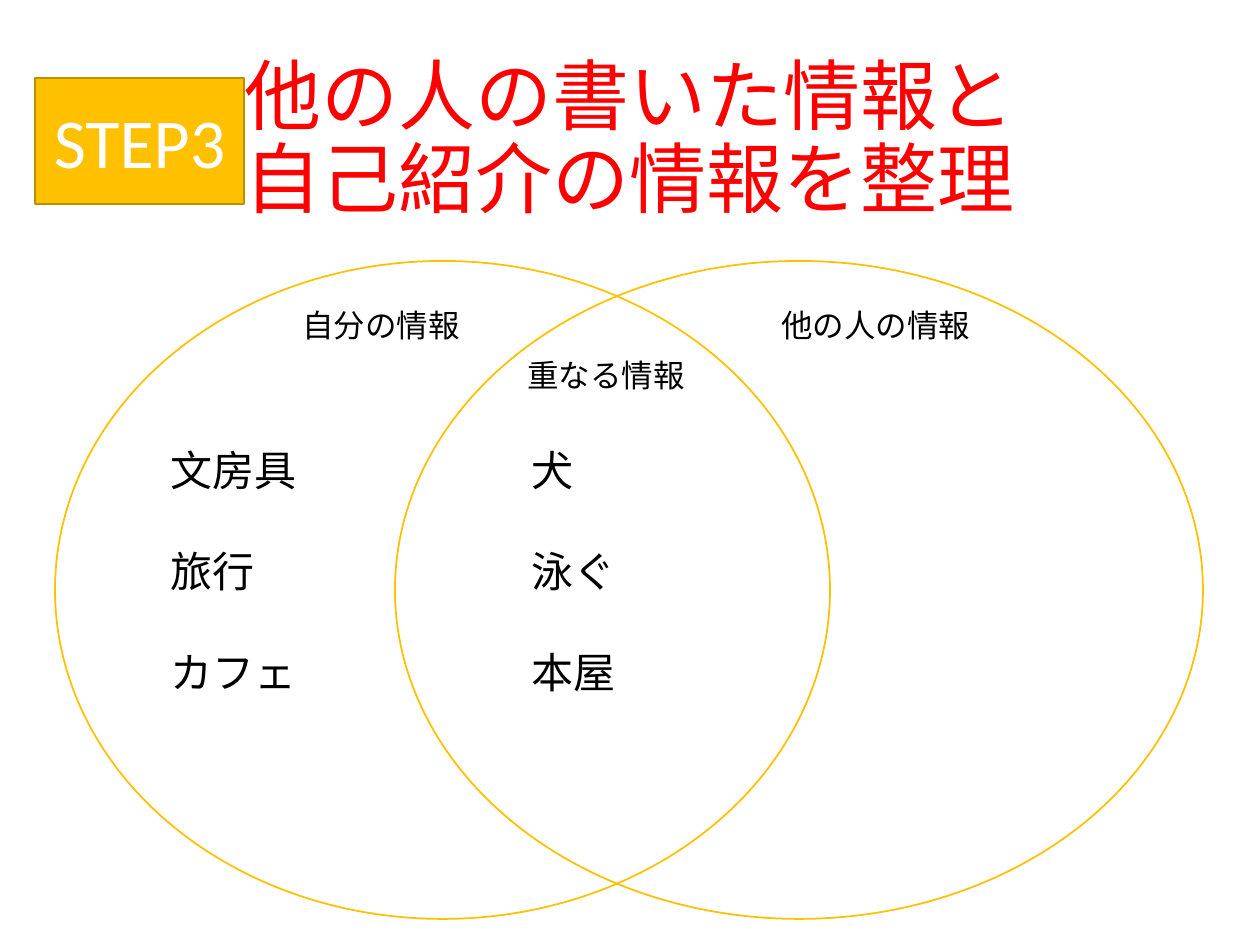
"""Build the STEP3 slide: a Venn diagram sorting shared and separate information."""
from dataclasses import dataclass

from pptx import Presentation
from pptx.dml.color import RGBColor as Color
from pptx.enum.shapes import MSO_SHAPE as Shape
from pptx.enum.text import MSO_ANCHOR as Anchor, MSO_AUTO_SIZE as AutoSize, PP_ALIGN as Align
from pptx.util import Pt

PX = 914400 / 126


@dataclass(frozen=True)
class Theme:
    font: str = "Calibri"
    red: Color = Color(0xFF, 0x00, 0x00)
    gold: Color = Color(0xFF, 0xC0, 0x00)
    dark_gold: Color = Color(0xBD, 0x8E, 0x00)
    white: Color = Color(0xFF, 0xFF, 0xFF)
    black: Color = Color(0x00, 0x00, 0x00)
    title_size: int = 44
    step_size: int = 40
    item_size: int = 24
    label_size: int = 18
    item_gap: int = 29


theme = Theme()


def box(*lengths):
    return [round(length * PX) for length in lengths]


def write(paragraph, text, size, color, align=Align.LEFT):
    paragraph.text = text
    paragraph.alignment = align
    paragraph.font.name = theme.font
    paragraph.font.size = Pt(size)
    paragraph.font.color.rgb = color


presentation = Presentation()
presentation.slide_width, presentation.slide_height = box(1260, 945)
slide = presentation.slides.add_slide(presentation.slide_layouts[5])

title = slide.shapes.title
title.left, title.top, title.width, title.height = box(87, 50, 1086, 183)
title.text_frame.vertical_anchor = Anchor.MIDDLE
heading = title.text_frame.paragraphs[0]
write(heading, "他の人の書いた情報と\n自己紹介の情報を整理", theme.title_size, theme.red, Align.CENTER)
heading.line_spacing = 0.9

step = slide.shapes.add_shape(Shape.RECTANGLE, *box(35, 78, 209, 126))
step.shadow.inherit = False
step.fill.solid()
step.fill.fore_color.rgb = theme.gold
step.line.color.rgb = theme.dark_gold
step.line.width = Pt(1)
step.text_frame.vertical_anchor = Anchor.MIDDLE
write(step.text_frame.paragraphs[0], "STEP3", theme.step_size, theme.white, Align.CENTER)

for left, width in [(55, 775), (395, 808)]:
    circle = slide.shapes.add_shape(Shape.OVAL, *box(left, 261, width, 658))
    circle.shadow.inherit = False
    circle.fill.background()
    circle.line.color.rgb = theme.gold
    circle.line.width = Pt(1)

texts = [
    (290, 300, 200, 50, theme.label_size, ["自分の情報"]),
    (769, 300, 237, 50, theme.label_size, ["他の人の情報"]),
    (515, 350, 200, 50, theme.label_size, ["重なる情報"]),
    (158, 438, 220, 267, theme.item_size, ["文房具", "旅行", "カフェ"]),
    (519, 438, 220, 369, theme.item_size, ["犬", "泳ぐ", "本屋"]),
]
for left, top, width, height, size, lines in texts:
    frame = slide.shapes.add_textbox(*box(left, top, width, height)).text_frame
    frame.word_wrap = True
    frame.auto_size = AutoSize.SHAPE_TO_FIT_TEXT
    for index, line in enumerate(lines):
        paragraph = frame.add_paragraph() if index else frame.paragraphs[0]
        write(paragraph, line, size, theme.black)
        if index:
            paragraph.space_before = Pt(theme.item_gap)

presentation.save("out.pptx")
